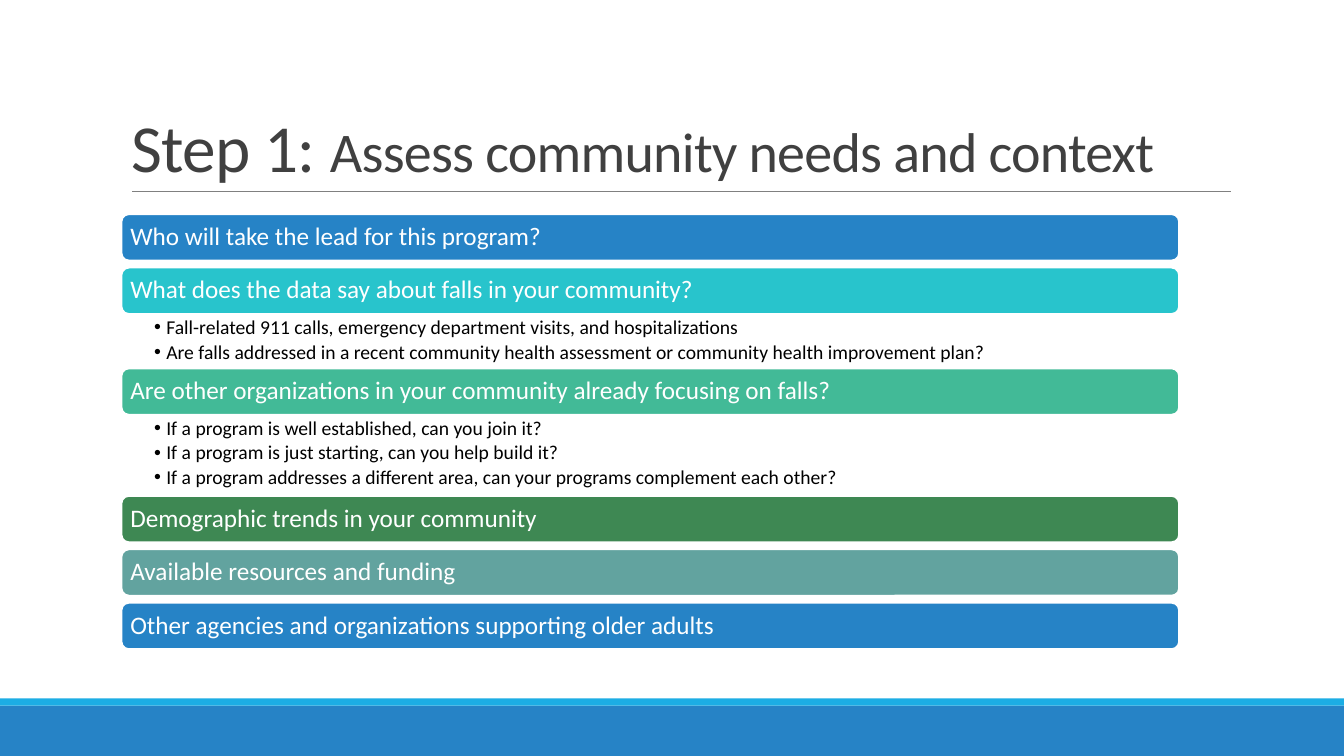
from dataclasses import dataclass

from lxml.etree import SubElement
from pptx import Presentation
from pptx.dml.color import RGBColor
from pptx.enum.shapes import MSO_CONNECTOR, MSO_SHAPE
from pptx.enum.text import MSO_ANCHOR, MSO_AUTO_SIZE, PP_ALIGN
from pptx.oxml.ns import qn
from pptx.util import Inches, Pt

SLIDE_WIDTH, SLIDE_HEIGHT = 13.33, 7.5
LEFT = 1.2
BAR_WIDTH, BAR_HEIGHT = 10.5, 0.47
ROW = 0.53
FIRST_ROW = 4
FONT = "Calibri"


@dataclass(frozen=True)
class Question:
    text: str
    color: str
    details: tuple[str, ...] = ()


@dataclass(frozen=True)
class Band:
    top: float
    height: float
    color: str


@dataclass(frozen=True)
class TitlePart:
    text: str
    size: int


QUESTIONS = (
    Question("Who will take the lead for this program?", "2683C6"),
    Question("What does the data say about falls in your community?", "28C4CC", (
        "Fall-related 911 calls, emergency department visits, and hospitalizations",
        "Are falls addressed in a recent community health assessment or "
        "community health improvement plan?",
    )),
    Question("Are other organizations in your community already focusing on falls?", "42BA97", (
        "If a program is well established, can you join it?",
        "If a program is just starting, can you help build it?",
        "If a program addresses a different area, can your programs complement each other?",
    )),
    Question("Demographic trends in your community", "3E8853"),
    Question("Available resources and funding", "62A39F"),
    Question("Other agencies and organizations supporting older adults", "2683C6"),
)
BANDS = (Band(7, 0.5, "2683C6"), Band(6.93, 0.07, "1CADE4"))
TITLE = (TitlePart("Step 1: ", 48), TitlePart("Assess community needs and context", 40))


def rgb(color: str) -> RGBColor:
    return RGBColor.from_string(color)


def place(shape, left: float, top: float, width: float, height: float) -> None:
    shape.left, shape.top = Inches(left), Inches(top)
    shape.width, shape.height = Inches(width), Inches(height)


def set_frame(frame, anchor, left: float, top: float, right: float, bottom: float) -> None:
    frame.word_wrap = True
    frame.auto_size = MSO_AUTO_SIZE.NONE
    frame.vertical_anchor = anchor
    frame.margin_left, frame.margin_top = Inches(left), Inches(top)
    frame.margin_right, frame.margin_bottom = Inches(right), Inches(bottom)


def add_run(paragraph, text: str, size: int, color: str):
    run = paragraph.add_run()
    run.text = text
    run.font.name = FONT
    run.font.size = Pt(size)
    run.font.color.rgb = rgb(color)
    return run


def add_block(slide, kind, left: float, top: float, width: float, height: float, color: str):
    shape = slide.shapes.add_shape(
        kind, Inches(left), Inches(top), Inches(width), Inches(height))
    shape.shadow.inherit = False
    shape.fill.solid()
    shape.fill.fore_color.rgb = rgb(color)
    shape.line.fill.background()
    return shape


def add_title(slide) -> None:
    title = slide.shapes.title
    place(title, LEFT, 0.31, 11, 1.59)
    set_frame(title.text_frame, MSO_ANCHOR.BOTTOM, 0.1, 0.05, 0.1, 0.05)
    paragraph = title.text_frame.paragraphs[0]
    paragraph.alignment = PP_ALIGN.LEFT
    paragraph.line_spacing = 0.85
    paragraph.space_before = Pt(0)
    for part in TITLE:
        run = add_run(paragraph, part.text, part.size, "404040")
        run.font._element.set("spc", "-50")


def add_rule(slide) -> None:
    rule = slide.shapes.add_connector(
        MSO_CONNECTOR.STRAIGHT, Inches(1.31), Inches(1.9), Inches(12.21), Inches(1.9))
    rule.line.color.rgb = rgb("808080")
    rule.line.width = Pt(0.5)
    SubElement(rule._element.spPr, qn("a:effectLst"))


def add_bar(slide, question: Question, top: float) -> None:
    bar = add_block(slide, MSO_SHAPE.ROUNDED_RECTANGLE,
                    LEFT, top, BAR_WIDTH, BAR_HEIGHT, question.color)
    bar.line.color.rgb = rgb("FFFFFF")
    bar.line.width = Pt(2)
    set_frame(bar.text_frame, MSO_ANCHOR.MIDDLE, 0.07, 0.07, 0.07, 0.07)
    paragraph = bar.text_frame.paragraphs[0]
    paragraph.alignment = PP_ALIGN.LEFT
    paragraph.line_spacing = 0.9
    add_run(paragraph, question.text, 18, "FFFFFF")


def add_details(slide, details: tuple[str, ...], top: float, height: float) -> None:
    box = slide.shapes.add_textbox(
        Inches(LEFT), Inches(top), Inches(BAR_WIDTH), Inches(height))
    frame = box.text_frame
    set_frame(frame, MSO_ANCHOR.TOP, 0.33, 0.03, 0.14, 0.03)
    for index, detail in enumerate(details):
        paragraph = frame.add_paragraph() if index else frame.paragraphs[0]
        paragraph.level = 1
        paragraph.line_spacing = 0.9
        paragraph.space_after = Pt(2.5)
        properties = paragraph._p.get_or_add_pPr()
        properties.set("marL", str(Inches(0.12)))
        properties.set("indent", str(-Inches(0.12)))
        SubElement(properties, qn("a:buFont"), typeface="Arial")
        SubElement(properties, qn("a:buChar"), char="•")
        add_run(paragraph, detail, 14, "000000")


def add_questions(slide) -> None:
    top = FIRST_ROW * ROW
    for question in QUESTIONS:
        add_bar(slide, question, top)
        if question.details:
            height = len(question.details) * ROW / 2
            add_details(slide, question.details, top + BAR_HEIGHT, height)
            top += BAR_HEIGHT + height
        else:
            top += ROW


def main() -> None:
    presentation = Presentation()
    presentation.slide_width = Inches(SLIDE_WIDTH)
    presentation.slide_height = Inches(SLIDE_HEIGHT)
    slide = presentation.slides.add_slide(presentation.slide_layouts[5])
    for band in BANDS:
        add_block(slide, MSO_SHAPE.RECTANGLE, 0, band.top, SLIDE_WIDTH, band.height, band.color)
    add_rule(slide)
    add_title(slide)
    add_questions(slide)
    presentation.save("out.pptx")


if __name__ == "__main__":
    main()
